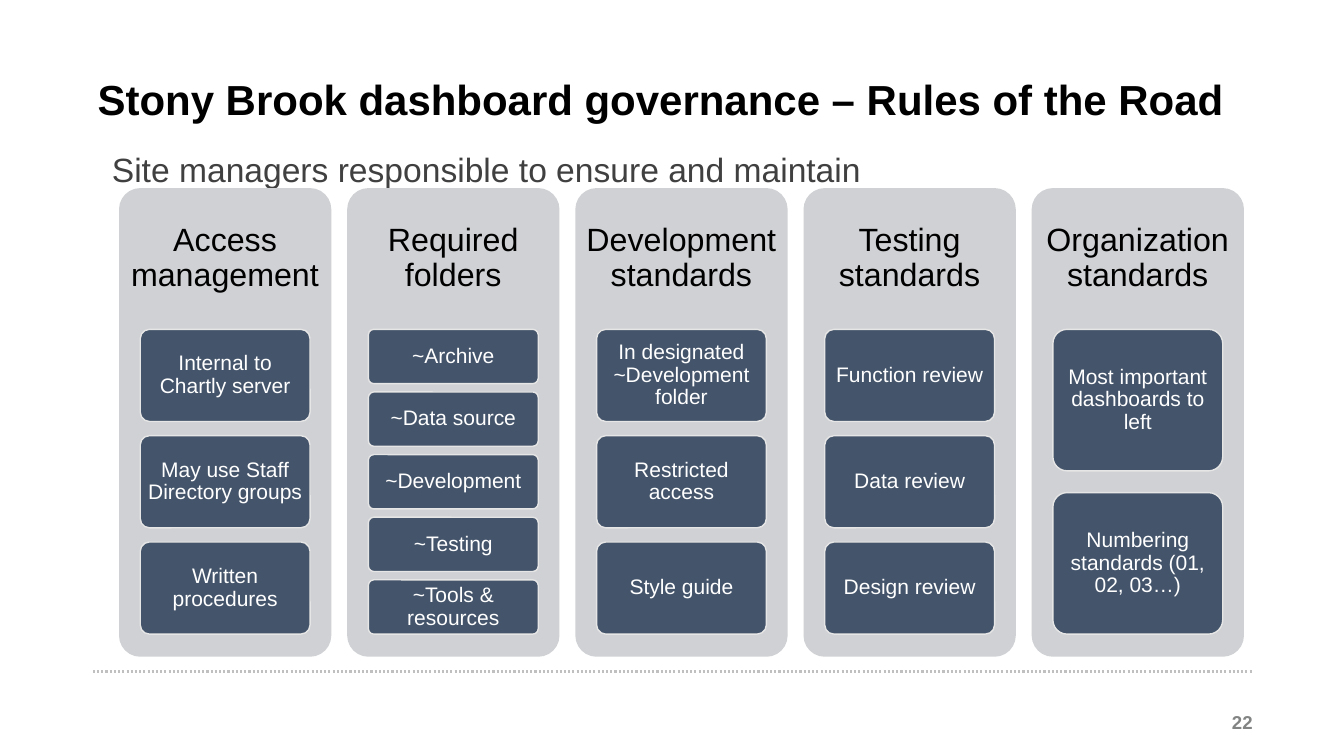
from dataclasses import dataclass

from lxml.etree import SubElement
from pptx import Presentation
from pptx.dml.color import RGBColor as Rgb
from pptx.enum.dml import MSO_LINE as Dash
from pptx.enum.shapes import MSO_CONNECTOR as Link, MSO_SHAPE as Form
from pptx.enum.text import MSO_ANCHOR as Anchor, MSO_AUTO_SIZE as Fit, PP_ALIGN as Align
from pptx.oxml.ns import qn
from pptx.util import Cm, Pt


@dataclass(frozen=True)
class Theme:
    font: str = "Arial"
    black: str = "000000"
    text: str = "404040"
    panel: str = "CFD1D4"
    box: str = "44546A"
    edge: str = "E7E6E6"
    white: str = "FFFFFF"
    rule: str = "C0C0C0"
    page: str = "828383"
    title_size: float = 30
    lead_size: float = 24
    head_size: float = 23
    box_size: float = 15
    page_size: float = 13.3


class Deck:
    """Holds the theme and the current slide."""

    def __init__(self, theme):
        self.theme = theme
        self.file = Presentation()
        self.file.slide_width, self.file.slide_height = Cm(33.87), Cm(19.05)
        self.slide = self.file.slides.add_slide(self.file.slide_layouts[1])
        self.shapes = self.slide.shapes

    def set_text(self, shape, text, size, color, bold=False, align=Align.CENTER,
                 anchor=Anchor.MIDDLE, inset=(0.25, 0.25), space=0.9):
        """Put one formatted paragraph in a shape; inset is (side, top) in cm."""
        side, top = map(Cm, inset)
        frame = shape.text_frame
        frame.text = text
        para = frame.paragraphs[0]
        formats = (
            (frame, dict(word_wrap=True, auto_size=Fit.NONE, vertical_anchor=anchor,
                         margin_left=side, margin_right=side,
                         margin_top=top, margin_bottom=top)),
            (para, dict(alignment=align, line_spacing=space,
                        space_before=Pt(0), space_after=Pt(0))),
            (para.font, dict(name=self.theme.font, size=Pt(size), bold=bold)),
        )
        for part, values in formats:
            for name, value in values.items():
                setattr(part, name, value)
        para.font.color.rgb = Rgb.from_string(color)
        return para

    def fill_holder(self, index, area, text, size, color, **style):
        holder = self.slide.placeholders[index]
        for name, value in zip(("left", "top", "width", "height"), area):
            setattr(holder, name, Cm(value))
        para = self.set_text(holder, text, size, color, align=Align.LEFT,
                             anchor=Anchor.TOP, inset=(0.25, 0.23), **style)
        props = para._p.get_or_add_pPr()
        props.set("marL", "0")
        props.set("indent", "0")
        props.insert_element_before(props.makeelement(qn("a:buNone")),
                                    "a:tabLst", "a:defRPr", "a:extLst")

    def label(self, area, text, size, color, **style):
        box = self.shapes.add_textbox(*map(Cm, area))
        self.set_text(box, text, size, color, **style)

    def card(self, area, fill, edge=None):
        card = self.shapes.add_shape(Form.ROUNDED_RECTANGLE, *map(Cm, area))
        card.adjustments[0] = 0.1
        card.shadow.inherit = False
        card.fill.solid()
        card.fill.fore_color.rgb = Rgb.from_string(fill)
        if edge:
            card.line.color.rgb = Rgb.from_string(edge)
            card.line.width = Pt(1)
        else:
            card.line.fill.background()
        return card

    def rule(self, left, right, top):
        line = self.shapes.add_connector(Link.STRAIGHT, *map(Cm, (left, top, right, top)))
        line.line.color.rgb = Rgb.from_string(self.theme.rule)
        line.line.width = Pt(1.5)
        line.line.dash_style = Dash.ROUND_DOT
        SubElement(line._element.spPr, qn("a:effectLst"))

    def column(self, left, head, items):
        """Draw a panel with its heading and boxes that share the height below."""
        theme, top, width = self.theme, 4.74, 5.35
        self.card((left, top, width, 11.81), theme.panel)
        self.label((left, top, width, 3.54), head, theme.head_size, theme.black)
        gap = 2 / 13
        count = len(items)
        height = 7.68 / (count + (count - 1) * gap)
        for row, item in enumerate(items):
            y = 8.3 + row * height * (1 + gap)
            box = self.card((left + 0.1 * width, y, 0.8 * width, height),
                            theme.box, theme.edge)
            self.set_text(box, item, theme.box_size, theme.white, inset=(0.1, 0.08))


COLUMNS = {
    "Access management": ["Internal to Chartly server",
                          "May use Staff Directory groups", "Written procedures"],
    "Required folders": ["~Archive", "~Data source", "~Development", "~Testing",
                         "~Tools & resources"],
    "Development standards": ["In designated ~Development folder",
                              "Restricted access", "Style guide"],
    "Testing standards": ["Function review", "Data review", "Design review"],
    "Organization standards": ["Most important dashboards to left",
                               "Numbering standards (01, 02, 03…)"],
}


def main():
    theme = Theme()
    deck = Deck(theme)
    deck.rule(2.34, 31.55, 16.92)
    deck.label((24.28, 17.68, 7.62, 1.02), "22", theme.page_size, theme.page,
               bold=True, align=Align.RIGHT, inset=(0.33, 0.18), space=1)
    deck.fill_holder(0, (2.21, 1.88, 29.59, 2.29),
                     "Stony Brook dashboard governance – Rules of the Road",
                     theme.title_size, theme.black, bold=True, space=0.8)
    deck.fill_holder(1, (2.57, 3.53, 25.98, 1.22),
                     "Site managers responsible to ensure and maintain",
                     theme.lead_size, theme.text, space=1)
    for place, (head, items) in enumerate(COLUMNS.items()):
        deck.column(3 + 5.75 * place, head, items)
    deck.file.save("out.pptx")


if __name__ == "__main__":
    main()
